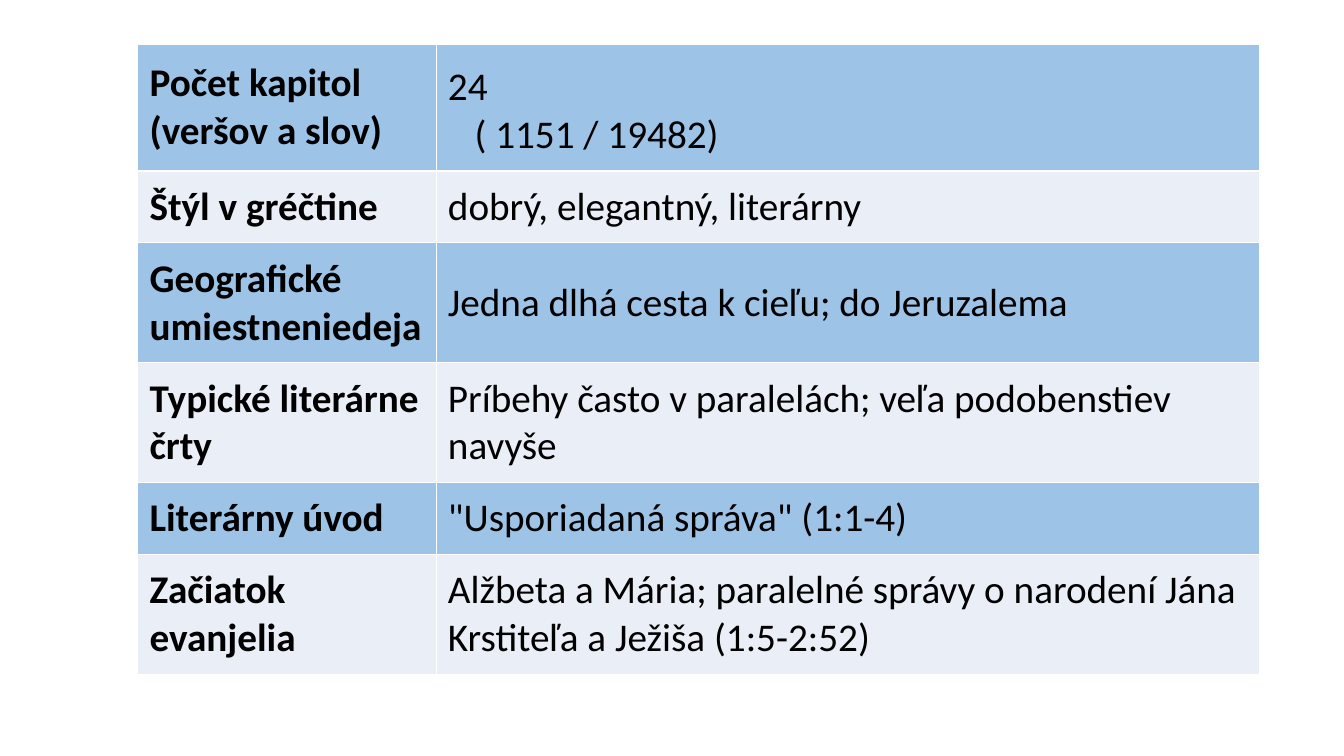
from dataclasses import dataclass

from lxml.etree import SubElement
from pptx import Presentation
from pptx.dml.color import RGBColor
from pptx.enum.text import MSO_ANCHOR
from pptx.oxml.ns import qn
from pptx.table import _Cell as Cell
from pptx.util import Cm, Pt


@dataclass(frozen=True)
class Theme:
    font: str = "Calibri"
    size: int = 28
    text: str = "000000"
    border: str = "FFFFFF"
    border_width: int = 1
    bands: tuple[str, str] = ("9DC3E6", "EAEFF7")


@dataclass(frozen=True)
class GospelRow:
    label: str
    value: str
    height: float
    value_drop: float = 0  # extra inset above the value, in cm


THEME = Theme()
ONE_LINE, TWO_LINES, TALL = 1.81, 3.02, 3.2
COLUMN_WIDTHS = (7.52, 20.75)
LEFT, TOP, INSET = 3.47, 1.11, 0.3
SECOND_LINE_INDENT = 0.67

ROWS = (
    GospelRow("Počet kapitol\n(veršov a slov)", "24\n( 1151 / 19482)", TALL, 0.17),
    GospelRow("Štýl v gréčtine", "dobrý, elegantný, literárny", ONE_LINE),
    GospelRow("Geografické umiestneniedeja",
              "Jedna dlhá cesta k\u00a0cieľu; do Jeruzalema", TWO_LINES),
    GospelRow("Typické literárne črty",
              "Príbehy často v paralelách; veľa podobenstiev navyše", TWO_LINES),
    GospelRow("Literárny úvod", '"Usporiadaná správa" (1:1-4)', ONE_LINE),
    GospelRow("Začiatok evanjelia",
              "Alžbeta a Mária; paralelné správy o narodení Jána "
              "Krstiteľa a Ježiša (1:5-2:52)", TWO_LINES),
)


def add_borders(cell: Cell) -> None:
    properties = cell._tc.get_or_add_tcPr()
    for side in ("lnL", "lnR", "lnT", "lnB"):
        line = SubElement(properties, qn(f"a:{side}"), w=str(Pt(THEME.border_width)))
        fill = SubElement(line, qn("a:solidFill"))
        SubElement(fill, qn("a:srgbClr"), val=THEME.border)


def fill_cell(cell: Cell, text: str, color: str, bold: bool, drop: float = 0) -> None:
    add_borders(cell)
    cell.fill.solid()
    cell.fill.fore_color.rgb = RGBColor.from_string(color)
    cell.vertical_anchor = MSO_ANCHOR.MIDDLE
    cell.margin_left = cell.margin_right = cell.margin_bottom = Cm(INSET)
    cell.margin_top = Cm(INSET + drop)
    cell.text_frame.text = text
    for paragraph in cell.text_frame.paragraphs:
        for run in paragraph.runs:
            run.font.name = THEME.font
            run.font.size = Pt(THEME.size)
            run.font.bold = bold
            run.font.color.rgb = RGBColor.from_string(THEME.text)


def indent_last_paragraph(cell: Cell) -> None:
    properties = cell.text_frame.paragraphs[-1]._p.get_or_add_pPr()
    properties.set("marL", str(Cm(SECOND_LINE_INDENT)))
    properties.set("indent", "0")


def main() -> None:
    presentation = Presentation()
    presentation.slide_width, presentation.slide_height = Cm(33.87), Cm(19.05)
    slide = presentation.slides.add_slide(presentation.slide_layouts[6])

    table = slide.shapes.add_table(
        len(ROWS), len(COLUMN_WIDTHS), Cm(LEFT), Cm(TOP),
        Cm(sum(COLUMN_WIDTHS)), Cm(sum(row.height for row in ROWS)),
    ).table
    table.first_row = table.horz_banding = False
    for column, width in zip(table.columns, COLUMN_WIDTHS):
        column.width = Cm(width)

    for index, row in enumerate(ROWS):
        table.rows[index].height = Cm(row.height)
        color = THEME.bands[index % 2]
        fill_cell(table.cell(index, 0), row.label, color, bold=True)
        fill_cell(table.cell(index, 1), row.value, color, bold=False, drop=row.value_drop)
    indent_last_paragraph(table.cell(0, 1))

    presentation.save("out.pptx")


if __name__ == "__main__":
    main()
